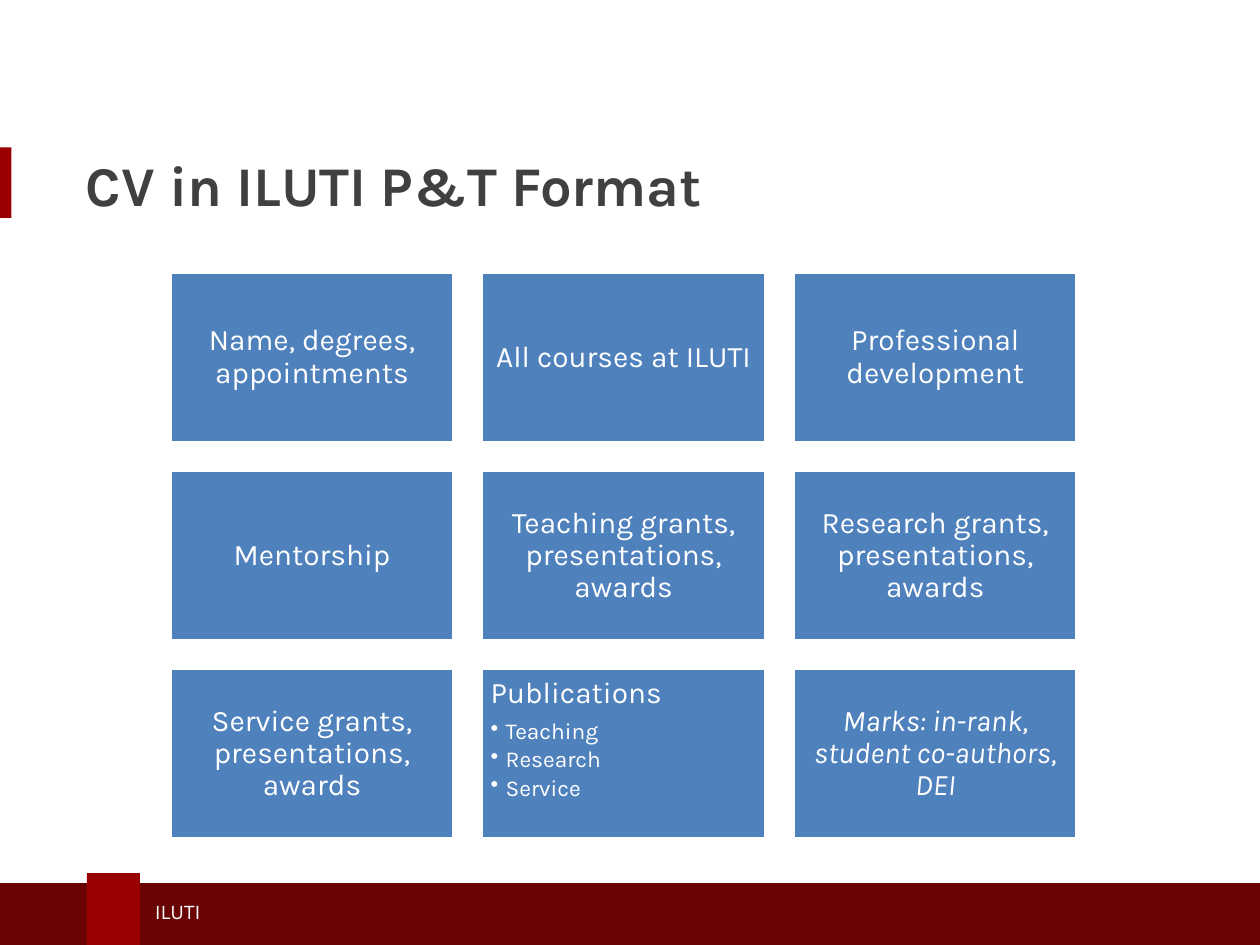
import dataclasses

import pptx
import pptx.dml.color
import pptx.enum.shapes
import pptx.enum.text
import pptx.oxml.ns
import pptx.util
from pptx.util import Inches

ALIGN = pptx.enum.text.PP_ALIGN
ANCHOR = pptx.enum.text.MSO_ANCHOR


@dataclasses.dataclass(frozen=True)
class Theme:
    """Colours, typeface and type sizes of the deck."""
    font: str = "Karla"
    crimson: str = "990000"
    maroon: str = "690304"
    tile: str = "4F81BD"
    white: str = "FFFFFF"
    ink: str = "404041"
    title_size: int = 32
    tile_size: int = 17
    bullet_size: int = 13
    footer_size: int = 12
    tile_border: int = 2


THEME = Theme()
SCHOOL = "ILUTI"
PUBLICATIONS = "Publications"
PUBLICATION_TYPES = ["Teaching", "Research", "Service"]
MARKS = "Marks: in-rank, student co-authors, DEI"
SECTIONS = [
    ["Name, degrees, appointments", f"All courses at {SCHOOL}", "Professional development"],
    ["Mentorship", "Teaching grants, presentations, awards",
     "Research grants, presentations, awards"],
    ["Service grants, presentations, awards", PUBLICATIONS, MARKS],
]


def rgb(value):
    """Turn a hex string into a colour."""
    return pptx.dml.color.RGBColor.from_string(value)


def add_block(page, box, fill, border=None):
    """Add a flat rectangle, with a border if a colour is given."""
    block = page.shapes.add_shape(pptx.enum.shapes.MSO_SHAPE.RECTANGLE, *box)
    block.shadow.inherit = False
    block.fill.solid()
    block.fill.fore_color.rgb = rgb(fill)
    if border:
        block.line.color.rgb = rgb(border)
        block.line.width = pptx.util.Pt(THEME.tile_border)
    else:
        block.line.fill.background()
    return block


def write(para, text, size, color=THEME.white, bold=False, italic=False,
          align=ALIGN.LEFT, spacing=1.0, after=0, bullet=False):
    """Fill a paragraph with one formatted span."""
    para.alignment = align
    para.line_spacing = spacing
    para.space_after = pptx.util.Pt(after)
    if bullet:
        props = para._p.get_or_add_pPr()
        props.set("marL", str(Inches(0.12)))
        props.set("indent", str(-Inches(0.12)))
        mark = props.makeelement(pptx.oxml.ns.qn("a:buChar"), {"char": "•"})
        props.append(mark)
    span = para.add_run()
    span.text = text
    span.font.name = THEME.font
    span.font.size = pptx.util.Pt(size)
    span.font.color.rgb = rgb(color)
    span.font.bold = bold
    span.font.italic = italic


def build_title(page, box):
    """Place the title and the accent at the page edge beside it."""
    left, top, width, height = box
    add_block(page, (0, top + Inches(0.06), Inches(0.09), Inches(0.56)), THEME.crimson)
    title = page.shapes.title
    title.left, title.top, title.width, title.height = left, top, width, height
    frame = title.text_frame
    frame.vertical_anchor = ANCHOR.MIDDLE
    write(frame.paragraphs[0], f"CV in {SCHOOL} P&T Format", THEME.title_size,
          color=THEME.ink, bold=True)


def build_footer(page, box):
    """Draw the footer band with its tab and label."""
    left, top, width, height = box
    add_block(page, box, THEME.maroon)
    add_block(page, (left + Inches(0.72), top - Inches(0.08), Inches(0.42),
                     height + Inches(0.08)), THEME.crimson)
    label = page.shapes.add_textbox(left + Inches(1.16), top + Inches(0.07),
                                    Inches(3.95), Inches(0.3))
    frame = label.text_frame
    frame.word_wrap = True
    frame.vertical_anchor = ANCHOR.MIDDLE
    write(frame.paragraphs[0], SCHOOL, THEME.footer_size)


def build_tile(page, box, text):
    """Draw one section tile, with a list under the publications heading."""
    frame = add_block(page, box, THEME.tile, THEME.white).text_frame
    frame.word_wrap = True
    frame.margin_left = frame.margin_right = Inches(0.07)
    frame.margin_top = frame.margin_bottom = Inches(0.07)
    listed = text == PUBLICATIONS
    frame.vertical_anchor = ANCHOR.TOP if listed else ANCHOR.MIDDLE
    write(frame.paragraphs[0], text, THEME.tile_size, italic=text == MARKS,
          align=ALIGN.LEFT if listed else ALIGN.CENTER, spacing=0.9, after=6)
    for item in PUBLICATION_TYPES if listed else []:
        write(frame.add_paragraph(), item, THEME.bullet_size,
              spacing=0.9, after=2, bullet=True)


def build_grid(page, box):
    """Lay the section tiles out in equal rows and columns."""
    left, top, width, height = box
    gap = Inches(0.22)
    tile_width = (width - gap * (len(SECTIONS[0]) - 1)) // len(SECTIONS[0])
    tile_height = (height - gap * (len(SECTIONS) - 1)) // len(SECTIONS)
    for row, texts in enumerate(SECTIONS):
        for column, text in enumerate(texts):
            place = (left + column * (tile_width + gap),
                     top + row * (tile_height + gap), tile_width, tile_height)
            build_tile(page, place, text)


def main():
    """Build and save the deck."""
    deck = pptx.Presentation()
    deck.slide_width, deck.slide_height = Inches(10), Inches(7.5)
    page = deck.slides.add_slide(deck.slide_layouts.get_by_name("Title Only"))
    build_footer(page, (Inches(-0.03), Inches(7.01), Inches(10.09), Inches(0.5)))
    build_title(page, (Inches(0.58), Inches(1.11), Inches(8.75), Inches(0.7)))
    build_grid(page, (Inches(1.35), Inches(2.16), Inches(7.2), Inches(4.5)))
    deck.save("out.pptx")


if __name__ == "__main__":
    main()
